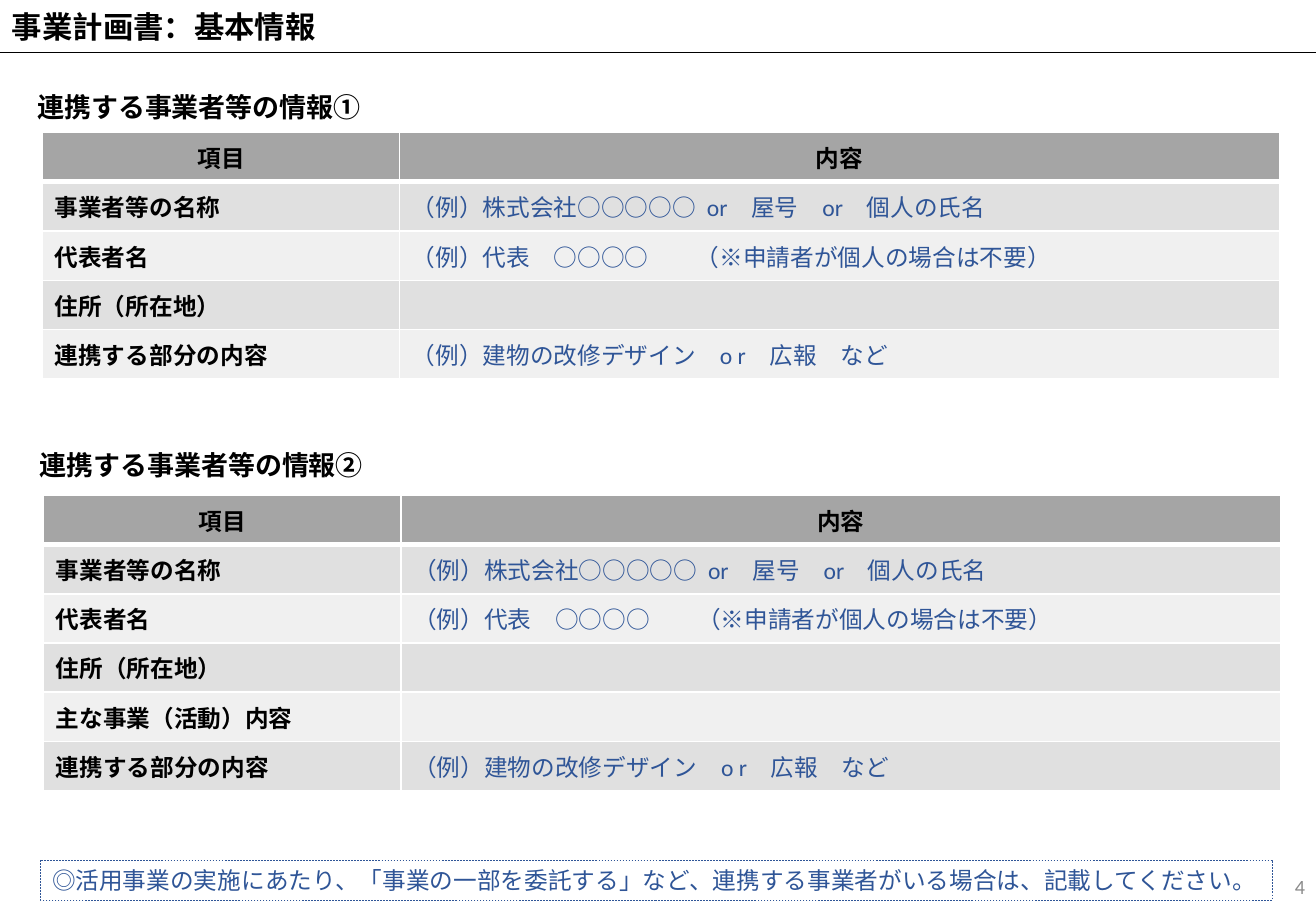
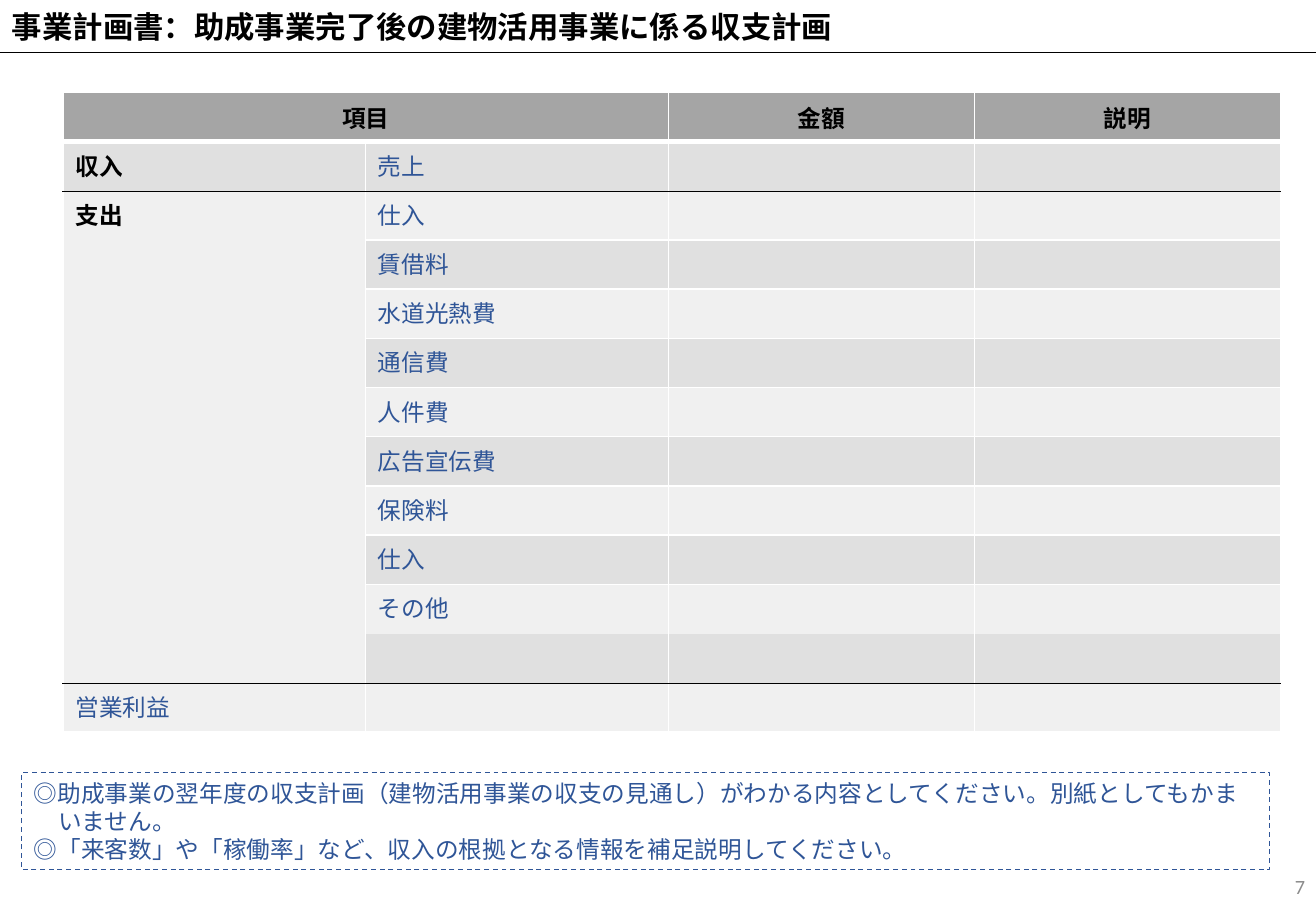
"""Builds two business plan form slides."""
from lxml import etree
from pptx import Presentation, util as u
from pptx.dml import color
from pptx.enum import dml, shapes, text
from pptx.oxml import ns

FONT = "Calibri"
BLACK, WHITE, BLUE, GREY = "000000", "FFFFFF", "2F5597", "8B8B8B"
HEAD, BANDS = "A5A5A5", ("F0F0F0", "E0E0E0")
THIN, THICK, RULE = (WHITE, 0.96), (WHITE, 3), (BLACK, 0.23)
LEFT, MID, RIGHT = text.PP_ALIGN.LEFT, text.PP_ALIGN.CENTER, text.PP_ALIGN.RIGHT
TOP, CENTRE = text.MSO_ANCHOR.TOP, text.MSO_ANCHOR.MIDDLE

NAME = ("事業者等の名称", "（例）株式会社○○○○○  or　屋号　or　個人の氏名")
CHIEF = ("代表者名", "（例）代表　○○○○　　（※申請者が個人の場合は不要）")
PLACE = ("住所（所在地）", "")
WORK = ("主な事業（活動）内容", "")
PART = ("連携する部分の内容", "（例）建物の改修デザイン　o r　広報　など")
COSTS = ("仕入", "賃借料", "水道光熱費", "通信費", "人件費",
         "広告宣伝費", "保険料", "仕入", "その他", "")


def rgb(code):
    """Turn a hex string into a colour."""
    return color.RGBColor.from_string(code)


def style(frame, size, tint, bold=False, align=LEFT):
    """Format all the text in a frame."""
    for para in frame.paragraphs:
        para.alignment = align
        for run in para.runs:
            run.font.name, run.font.size = FONT, u.Pt(size)
            run.font.bold, run.font.color.rgb = bold, rgb(tint)


def label(slide, box, words, size, tint=BLACK, bold=True, align=LEFT, anchor=TOP):
    """Add a one-line text box."""
    frame = slide.shapes.add_textbox(*map(u.Inches, box)).text_frame
    frame.text = words
    frame.word_wrap = align == RIGHT
    frame.vertical_anchor = anchor
    style(frame, size, tint, bold, align)


def page(deck, title, width, number):
    """Add a slide with its title, rule and page number."""
    slide = deck.slides.add_slide(deck.slide_layouts[6])
    label(slide, (0, 0.02, width, 0.4), title, 18)
    line = slide.shapes.add_connector(
        shapes.MSO_CONNECTOR.STRAIGHT, 0, u.Inches(0.43), deck.slide_width, u.Inches(0.43))
    line.line.color.rgb, line.line.width = rgb(BLACK), u.Pt(0.75)
    etree.SubElement(line.element.spPr, ns.qn("a:effectLst"))
    label(slide, (8.4, 7.1, 2.44, 0.4), number, 12, GREY, False, RIGHT, CENTRE)
    return slide


def note(slide, box, lines, width):
    """Add a dashed box of hanging notes."""
    shape = slide.shapes.add_shape(shapes.MSO_SHAPE.RECTANGLE, *map(u.Inches, box))
    shape.shadow.inherit = False
    shape.fill.background()
    shape.line.color.rgb, shape.line.width = rgb(BLUE), u.Pt(width)
    shape.line.dash_style = dml.MSO_LINE.DASH
    frame = shape.text_frame
    frame.text = "\n".join(lines)
    frame.word_wrap, frame.vertical_anchor = True, TOP
    frame.auto_size = text.MSO_AUTO_SIZE.SHAPE_TO_FIT_TEXT
    for para in frame.paragraphs:
        props = para._p.get_or_add_pPr()
        props.set("marL", str(u.Inches(0.2)))
        props.set("indent", str(u.Inches(-0.2)))
    style(frame, 14, BLUE)


def edge(cell, side, rule):
    """Draw one border of a cell, or none."""
    props = cell._tc.get_or_add_tcPr()
    line = etree.Element(ns.qn("a:ln" + side))
    props.insert("LRTB".index(side), line)
    if rule is None:
        etree.SubElement(line, ns.qn("a:noFill"))
        return
    line.set("w", str(u.Pt(rule[1])))
    fill = etree.SubElement(line, ns.qn("a:solidFill"))
    etree.SubElement(fill, ns.qn("a:srgbClr"), val=rule[0])


def grid(slide, spot, cols, height, rows, anchor=CENTRE, merges=(), rules=None):
    """Add a banded table; rules maps a row boundary to its line."""
    rules = {1: THICK, **(rules or {})}
    box = (*spot, sum(cols), height)
    table = slide.shapes.add_table(len(rows), len(cols), *map(u.Inches, box)).table
    table.first_row = table.horz_banding = False
    for col, width in zip(table.columns, cols):
        col.width = u.Inches(width)
    for first, last in merges:
        table.cell(*first).merge(table.cell(*last))
    for r, row in enumerate(rows):
        table.rows[r].height = u.Inches(height / len(rows))
        for c, words in enumerate(row):
            cell = table.cell(r, c)
            if cell.is_spanned:
                continue
            end = r + (cell.span_height if cell.is_merge_origin else 1)
            cell.fill.solid()
            cell.fill.fore_color.rgb = rgb(BANDS[r % 2] if r else HEAD)
            for side, rule in (("L", THIN), ("R", THIN), ("T", rules.get(r, THIN)),
                               ("B", rules.get(end, THIN))):
                edge(cell, side, rule)
            cell.vertical_anchor = anchor if r else CENTRE
            if not words:
                cell.margin_top = cell.margin_bottom = 0
                continue
            cell.text_frame.text = words
            bold = r == 0 or (c == 0 and words != "営業利益")
            style(cell.text_frame, 14, BLACK if bold else BLUE, bold, LEFT if r else MID)


def partners(deck):
    """Build the slide on partner businesses."""
    slide = page(deck, "事業計画書：基本情報", 2.85, "4")
    head, cols = ("項目", "内容"), (2.94, 7.24)
    label(slide, (0.21, 0.7, 3.09, 0.36), "連携する事業者等の情報①", 16)
    grid(slide, (0.35, 1.09), cols, 2.03, (head, NAME, CHIEF, PLACE, PART))
    label(slide, (0.23, 3.64, 3.09, 0.36), "連携する事業者等の情報②", 16)
    grid(slide, (0.36, 4.08), cols, 2.43, (head, NAME, CHIEF, PLACE, WORK, PART))
    note(slide, (0.33, 7.08, 10.14, 0.33), [
        "◎活用事業の実施にあたり、「事業の一部を委託する」など、"
        "連携する事業者がいる場合は、記載してください。"], 0.25)


def budget(deck):
    """Build the slide on income and costs."""
    slide = page(deck, "事業計画書：助成事業完了後の建物活用事業に係る収支計画", 7.64, "7")
    note(slide, (0.18, 6.36, 10.27, 0.8), [
        "◎助成事業の翌年度の収支計画（建物活用事業の収支の見通し）が"
        "わかる内容としてください。別紙としてもかまいません。",
        "◎「来客数」や「稼働率」など、収入の根拠となる情報を補足説明してください。"], 0)
    rows = [("項目", "", "金額", "説明"), ("収入", "売上", "", "")]
    rows += [("" if i else "支出", cost, "", "") for i, cost in enumerate(COSTS)]
    rows.append(("営業利益", "", "", ""))
    last = len(rows) - 1
    grid(slide, (0.52, 0.76), (2.49, 2.49, 2.52, 2.52), 5.27, rows, TOP,
         (((0, 0), (0, 1)), ((2, 0), (last - 1, 0))),
         {2: RULE, last - 1: None, last: RULE})


def main():
    """Build and save the deck."""
    deck = Presentation()
    deck.slide_width, deck.slide_height = u.Inches(10.83), u.Inches(7.5)
    partners(deck)
    budget(deck)
    deck.save("out.pptx")


if __name__ == "__main__":
    main()
